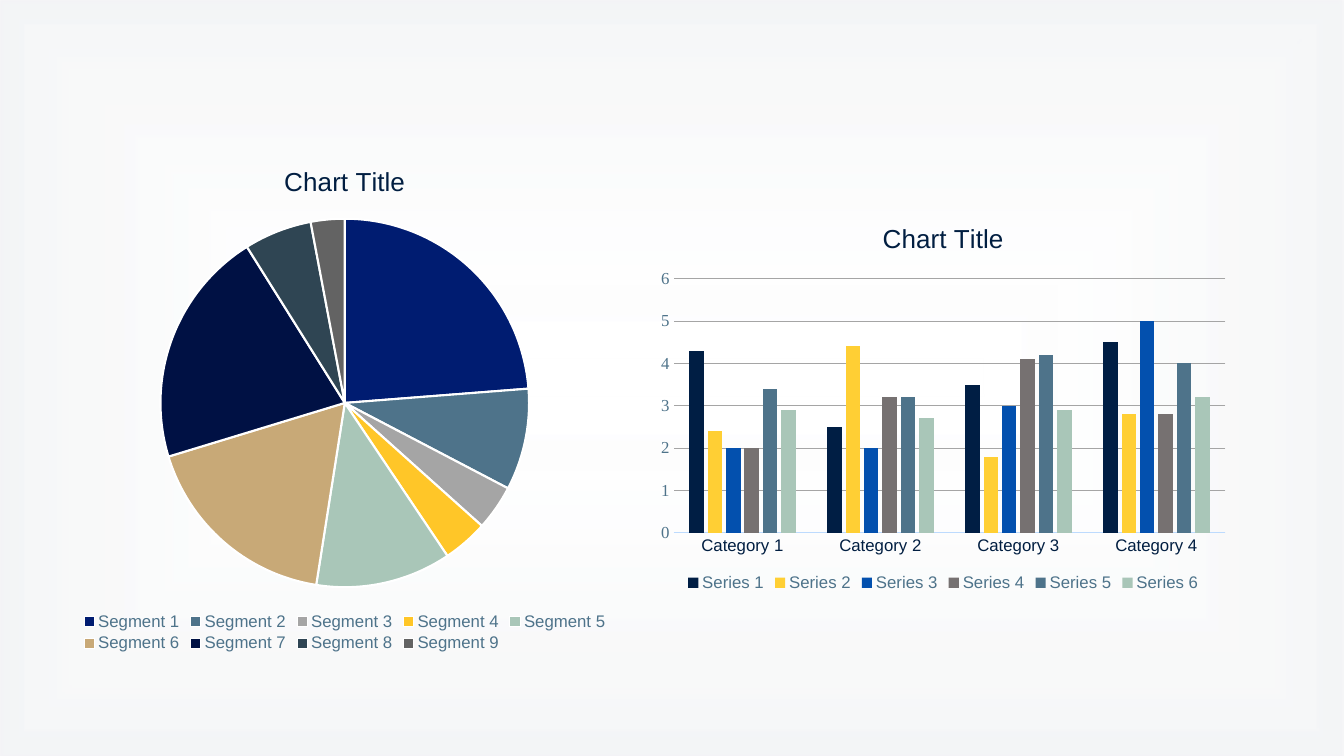
from lxml import etree
from pptx import Presentation
from pptx import util as u
from pptx.chart.data import CategoryChartData
from pptx.dml.color import RGBColor
from pptx.enum import chart as ch, shapes
from pptx.oxml import parse_xml

WIDE, HIGH = 13.33, 7.5
NAVY, SLATE, GRAY, MINT = "011E41", "4E738A", "A5A5A5", "A9C6B8"
SANS, SERIF = "Arial", "Times New Roman"
TITLE = "Chart Title"

BARS = [
    ("001E44", (4.3, 2.5, 3.5, 4.5)),
    ("FFCF34", (2.4, 4.4, 1.8, 2.8)),
    ("0350AE", (2, 2, 3, 5)),
    ("767171", (2, 3.2, 4.1, 2.8)),
    (SLATE, (3.4, 3.2, 4.2, 4)),
    (MINT, (2.9, 2.7, 2.9, 3.2)),
]
SLICES = [
    ("001C71", 24), (SLATE, 9), (GRAY, 4), ("FFC628", 4), (MINT, 12),
    ("C8A977", 18), ("001144", 21), ("2F4553", 6), ("636363", 3),
]
BAR_BOX = (6.44, 2.02, 5.83, 3.89)
PIE_BOX = (-0.39, 1.43, 7.62, 5.08)

GLOW = f"""<a:gradFill xmlns:a="http://schemas.openxmlformats.org/drawingml/2006/main" rotWithShape="1">
<a:gsLst><a:gs pos="0"><a:srgbClr val="FFFFFF"><a:alpha val="0"/></a:srgbClr></a:gs>
<a:gs pos="100000"><a:srgbClr val="{NAVY}"><a:alpha val="4000"/></a:srgbClr></a:gs></a:gsLst>
<a:path path="rect"><a:fillToRect l="50000" t="50000" r="50000" b="50000"/></a:path></a:gradFill>"""


def rgb(code):
    return RGBColor.from_string(code)


def style(font, size, color, name):
    font.size, font.name, font.bold = u.Pt(size), name, False
    font.color.rgb = rgb(color)


def paint(part, color):
    part.format.fill.solid()
    part.format.fill.fore_color.rgb = rgb(color)


def rule(line, color, width):
    line.color.rgb = rgb(color)
    line.width = u.Pt(width)


def names(word, count):
    return [f"{word} {i}" for i in range(1, count + 1)]


def add_chart(slide, kind, box, cats, rows):
    data = CategoryChartData()
    data.categories = cats
    for name, vals in zip(names("Series", len(rows)), rows):
        data.add_series(name, vals)
    chart = slide.shapes.add_chart(kind, *map(u.Inches, box), data).chart
    style(chart.font, 10, NAVY, SERIF)
    chart.has_title = True
    frame = chart.chart_title.text_frame
    frame.text = TITLE
    style(frame.paragraphs[0].font, 18.6, NAVY, SANS)
    chart.chart_title.include_in_layout = False
    chart.has_legend = True
    chart.legend.position = ch.XL_LEGEND_POSITION.BOTTOM
    chart.legend.include_in_layout = False
    style(chart.legend.font, 12, SLATE, SANS)
    return chart


def add_bars(slide):
    chart = add_chart(slide, ch.XL_CHART_TYPE.COLUMN_CLUSTERED, BAR_BOX,
                      names("Category", 4), [vals for _, vals in BARS])
    plot = chart.plots[0]
    plot.gap_width, plot.overlap, plot.vary_by_categories = 219, -27, False
    for series, (color, _) in zip(plot.series, BARS):
        paint(series, color)
    cat, val = chart.category_axis, chart.value_axis
    for axis, color, face in ((cat, NAVY, SANS), (val, SLATE, SERIF)):
        axis.major_tick_mark = axis.minor_tick_mark = ch.XL_TICK_MARK.NONE
        style(axis.tick_labels.font, 12, color, face)
    rule(cat.format.line, "BDDBFE", 0.75)
    val.format.line.fill.background()
    val.has_major_gridlines = True
    rule(val.major_gridlines.format.line, GRAY, 0.5)


def add_pie(slide):
    chart = add_chart(slide, ch.XL_CHART_TYPE.PIE, PIE_BOX,
                      names("Segment", len(SLICES)), [[v for _, v in SLICES]])
    plot = chart.plots[0]
    plot.vary_by_categories = True
    for i, (color, _) in enumerate(SLICES):
        point = plot.series[0].points[i]
        paint(point, color)
        rule(point.format.line, "FFFFFF", 1.5)


def add_glow(slide):
    glow = slide.shapes.add_shape(shapes.MSO_SHAPE.RECTANGLE, 0, 0,
                                  u.Inches(WIDE), u.Inches(HIGH))
    glow.shadow.inherit = False
    glow.line.fill.background()
    glow._element.spPr.prstGeom.addnext(parse_xml(GLOW))


def main():
    deck = Presentation()
    deck.slide_width, deck.slide_height = u.Inches(WIDE), u.Inches(HIGH)
    slide = deck.slides.add_slide(deck.slide_layouts[6])
    add_glow(slide)
    add_bars(slide)
    add_pie(slide)
    deck.save("out.pptx")


if __name__ == "__main__":
    main()
